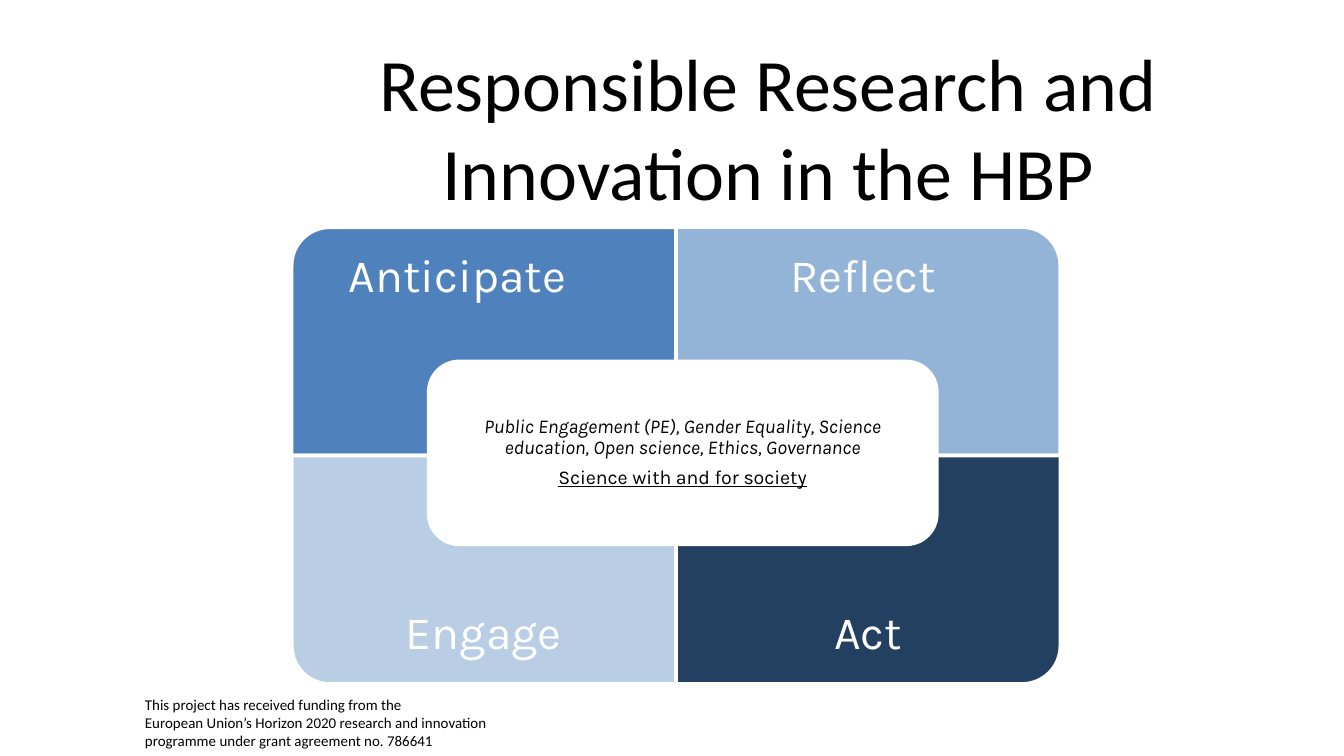
import pptx
import pptx.util
import pptx.dml.color
import pptx.enum.shapes
import pptx.enum.text

Inches, Pt = pptx.util.Inches, pptx.util.Pt
SHAPE = pptx.enum.shapes.MSO_SHAPE
ANCHOR = pptx.enum.text.MSO_ANCHOR
ALIGN = pptx.enum.text.PP_ALIGN

TITLE = "Responsible Research and Innovation in the HBP"
FUNDING = [
    "This project has received funding from the",
    "European Union’s Horizon 2020 research and innovation programme under grant agreement no. 786641",
]
QUADRANTS = [
    {"label": "Anticipate", "cell": (0, 0), "turn": 270, "fill": "4F81BD", "right_inset": 0.58},
    {"label": "Reflect", "cell": (1, 0), "turn": 0, "fill": "93B3D7", "right_inset": 0.26},
    {"label": "Engage", "cell": (0, 1), "turn": 180, "fill": "B9CDE5", "right_inset": 0.19},
    {"label": "Act", "cell": (1, 1), "turn": 90, "fill": "244061", "right_inset": 0.19},
]
THEMES = "Public Engagement (PE), Gender Equality, Science education, Open science, Ethics, Governance"
PROGRAMME = "Science with and for society"

THEME = {
    "text": "000000", "light": "FFFFFF", "line": 2,
    "body_font": "Calibri", "diagram_font": "Karla",
    "title": 39.6, "label": 24.8, "core": 10.5, "funding": 8,
    "corner": 0.167,
}
SLIDE_W = 10
SLIDE_H = SLIDE_W * 9 / 16
GRID_X, GRID_Y, CELL_W, CELL_H = 2.17, 1.69, 2.86, 1.7
LABEL_H = CELL_H * 0.75
CORE = (3.19, 2.69, 3.78, 1.36)
CORE_MARGIN = 0.07


def colour(code):
    return pptx.dml.color.RGBColor.from_string(code)


def add_panel(page, preset, area, fill, turn=0):
    panel = page.shapes.add_shape(preset, *map(Inches, area))
    panel.adjustments[0] = THEME["corner"]
    panel.rotation = turn
    panel.shadow.inherit = False
    panel.fill.solid()
    panel.fill.fore_color.rgb = colour(fill)
    panel.line.color.rgb = colour(THEME["light"])
    panel.line.width = Pt(THEME["line"])


def add_text(page, area, lines, font, size, ink="text", align=ALIGN.CENTER,
             anchor=ANCHOR.TOP, insets=(0.1, 0.05, 0.1, 0.05), spacing=None):
    frame = page.shapes.add_textbox(*map(Inches, area)).text_frame
    frame.word_wrap = True
    frame.vertical_anchor = anchor
    (frame.margin_left, frame.margin_top,
     frame.margin_right, frame.margin_bottom) = map(Inches, insets)
    for index, line in enumerate(lines):
        para = frame.add_paragraph() if index else frame.paragraphs[0]
        para.text = line
        para.alignment = align
        if spacing:
            para.line_spacing = spacing
        para.font.name = font
        para.font.size = Pt(size)
        para.font.color.rgb = colour(THEME[ink])
    return frame.paragraphs


def add_quadrant(page, quadrant):
    column, row = quadrant["cell"]
    left, top = GRID_X + column * CELL_W, GRID_Y + row * CELL_H
    width, height = (CELL_H, CELL_W) if quadrant["turn"] % 180 else (CELL_W, CELL_H)
    area = (left + (CELL_W - width) / 2, top + (CELL_H - height) / 2, width, height)
    add_panel(page, SHAPE.ROUND_1_RECTANGLE, area, quadrant["fill"], quadrant["turn"])
    label_top = top + row * (CELL_H - LABEL_H)
    add_text(page, (left, label_top, CELL_W, LABEL_H), [quadrant["label"]],
             THEME["diagram_font"], THEME["label"], ink="light",
             anchor=ANCHOR.BOTTOM if row else ANCHOR.TOP,
             insets=(0.19, 0.19, quadrant["right_inset"], 0.19), spacing=0.9)


def add_core(page):
    add_panel(page, SHAPE.ROUNDED_RECTANGLE, CORE, THEME["light"])
    left, top, width, height = CORE
    area = (left + CORE_MARGIN, top + CORE_MARGIN,
            width - 2 * CORE_MARGIN, height - 2 * CORE_MARGIN)
    themes, programme = add_text(page, area, [THEMES, PROGRAMME],
                                 THEME["diagram_font"], THEME["core"],
                                 anchor=ANCHOR.MIDDLE, insets=(0.06,) * 4, spacing=0.9)
    themes.font.italic = True
    programme.font.underline = True
    programme.space_before = Pt(4.7)


def main():
    deck = pptx.Presentation()
    deck.slide_width, deck.slide_height = Inches(SLIDE_W), Inches(SLIDE_H)
    page = deck.slides.add_slide(deck.slide_layouts[6])
    add_text(page, (0.98, 5.13, 2.91, 0.34), FUNDING,
             THEME["body_font"], THEME["funding"], align=ALIGN.LEFT)
    add_text(page, (1.93, 0.23, 7.57, 0.94), [TITLE], THEME["body_font"], THEME["title"])
    for quadrant in QUADRANTS:
        add_quadrant(page, quadrant)
    add_core(page)
    deck.save("out.pptx")


if __name__ == "__main__":
    main()
